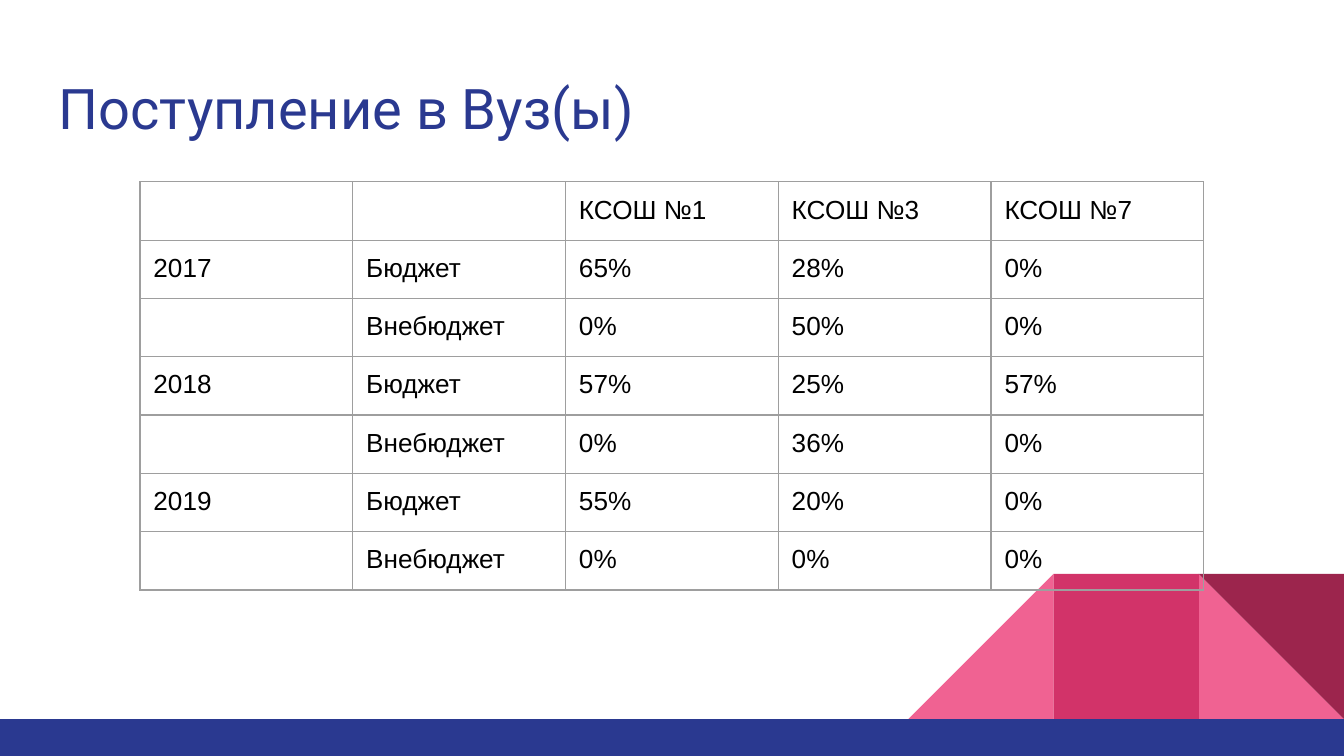
from lxml.etree import SubElement as Sub
from pptx import Presentation
from pptx.dml.color import RGBColor as Rgb
from pptx.enum.shapes import MSO_SHAPE as Kind
from pptx.enum.text import MSO_ANCHOR as Anchor
from pptx.oxml.ns import qn
from pptx.util import Pt

hues = {
    "blue": "2A3990", "pink": "F06292", "rose": "D23369",
    "wine": "9C254D", "grey": "9E9E9E", "black": "000000",
}


def write(frame, text, size=14, font="Arial", hue="black"):
    frame.word_wrap = True
    para = frame.paragraphs[0]
    if not text:
        # An empty cell keeps the row height of its text size
        Sub(para._p, qn("a:endParaRPr"), sz=str(size * 100))
        return
    run = para.add_run()
    run.text = text
    run.font.size = Pt(size)
    run.font.name = font
    run.font.color.rgb = Rgb.from_string(hues[hue])


deck = Presentation()
deck.slide_width, deck.slide_height = Pt(720), Pt(405)
slide = deck.slides.add_slide(deck.slide_layouts[6])
shapes = slide.shapes

# Corner pattern and bottom bar
side = 77.8
floor = 385.2
top = floor - side
left = 720 - 3 * side
parts = [
    (Kind.RIGHT_TRIANGLE, left + 2 * side, top, side, side, "pink", 0, False),
    (Kind.RIGHT_TRIANGLE, left, top, side, side, "pink", 0, True),
    (Kind.RECTANGLE, left + side, top, side, side, "rose", 0, False),
    (Kind.RIGHT_TRIANGLE, left + 2 * side, top, side, side, "wine", 180, False),
    (Kind.RECTANGLE, 0, floor, 720, 405 - floor, "blue", 0, False),
]
for kind, x, y, wide, high, hue, turn, flip in parts:
    part = shapes.add_shape(kind, Pt(x), Pt(y), Pt(wide), Pt(high))
    part.shadow.inherit = False
    part.fill.solid()
    part.fill.fore_color.rgb = Rgb.from_string(hues[hue])
    part.line.fill.background()
    part.rotation = turn
    if flip:
        part._element.spPr.find(qn("a:xfrm")).set("flipH", "1")

# Title
title = shapes.add_textbox(Pt(24.5), Pt(32.4), Pt(671), Pt(47.5)).text_frame
title.margin_left = title.margin_right = Pt(7.2)
title.margin_top = title.margin_bottom = Pt(7.2)
title.vertical_anchor = Anchor.TOP
write(title, "Поступление в Вуз(ы)", size=30, font="Roboto", hue="blue")

# Admission table
rows = [("", "", "КСОШ №1", "КСОШ №3", "КСОШ №7")]
years = {
    "2017": [("65%", "28%", "0%"), ("0%", "50%", "0%")],
    "2018": [("57%", "25%", "57%"), ("0%", "36%", "0%")],
    "2019": [("55%", "20%", "0%"), ("0%", "0%", "0%")],
}
for year, (paid, own) in years.items():
    rows += [(year, "Бюджет", *paid), ("", "Внебюджет", *own)]

wide, high = 114, 30
grid = shapes.add_table(len(rows), 5, Pt(75), Pt(97.4),
                        Pt(5 * wide), Pt(len(rows) * high)).table
grid.first_row = grid.horz_banding = False
for col in grid.columns:
    col.width = Pt(wide)
for r, row in enumerate(rows):
    grid.rows[r].height = Pt(high)
    for c, text in enumerate(row):
        cell = grid.cell(r, c)
        cell.margin_left = cell.margin_right = Pt(7.2)
        cell.margin_top = cell.margin_bottom = Pt(7.2)
        write(cell.text_frame, text)
        # Borders come before the fill in the cell properties
        props = cell._tc.get_or_add_tcPr()
        for edge in ("lnL", "lnR", "lnT", "lnB"):
            line = Sub(props, qn("a:" + edge), w=str(Pt(0.75)))
            fill = Sub(line, qn("a:solidFill"))
            Sub(fill, qn("a:srgbClr"), val=hues["grey"])
        cell.fill.background()

deck.save("out.pptx")
